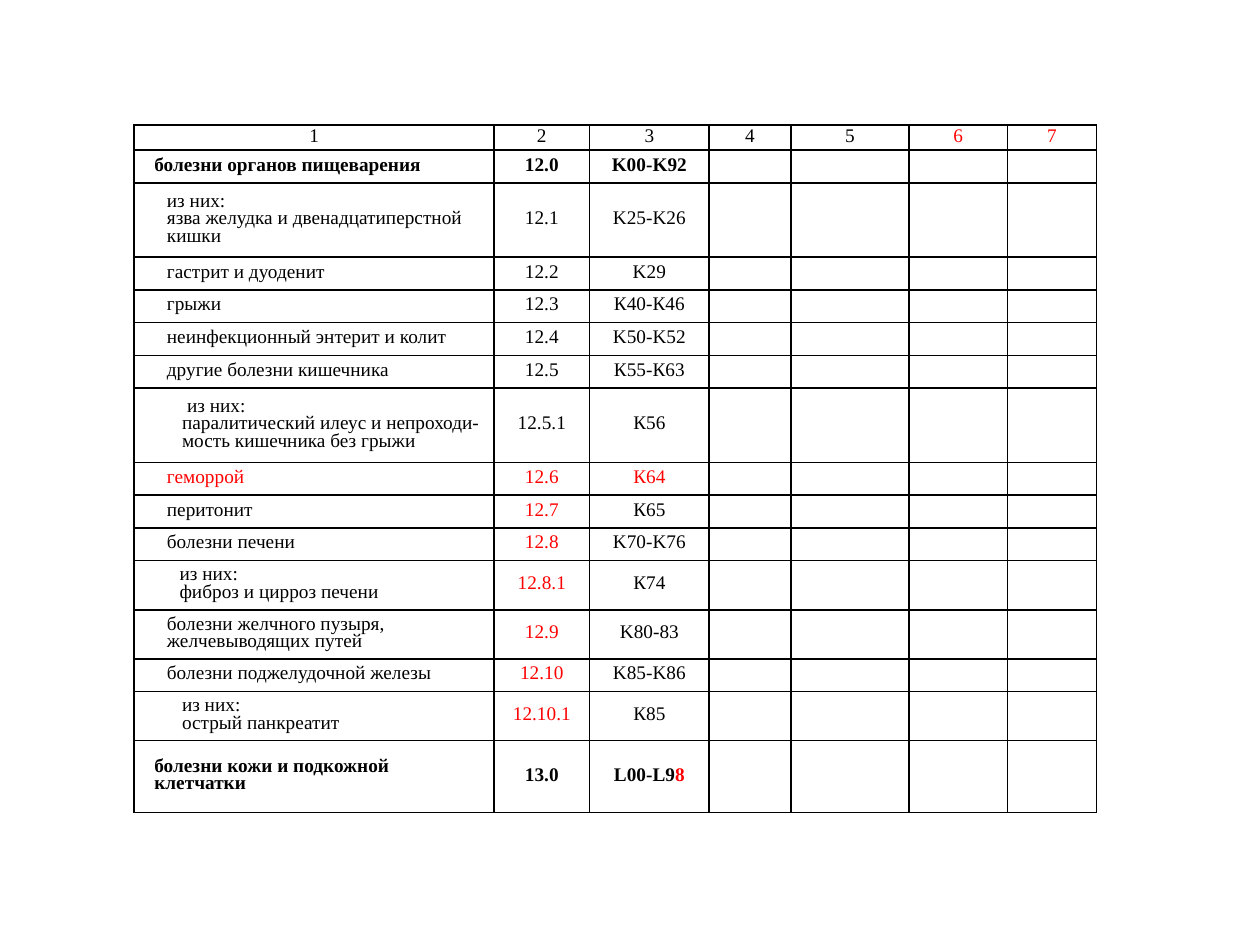
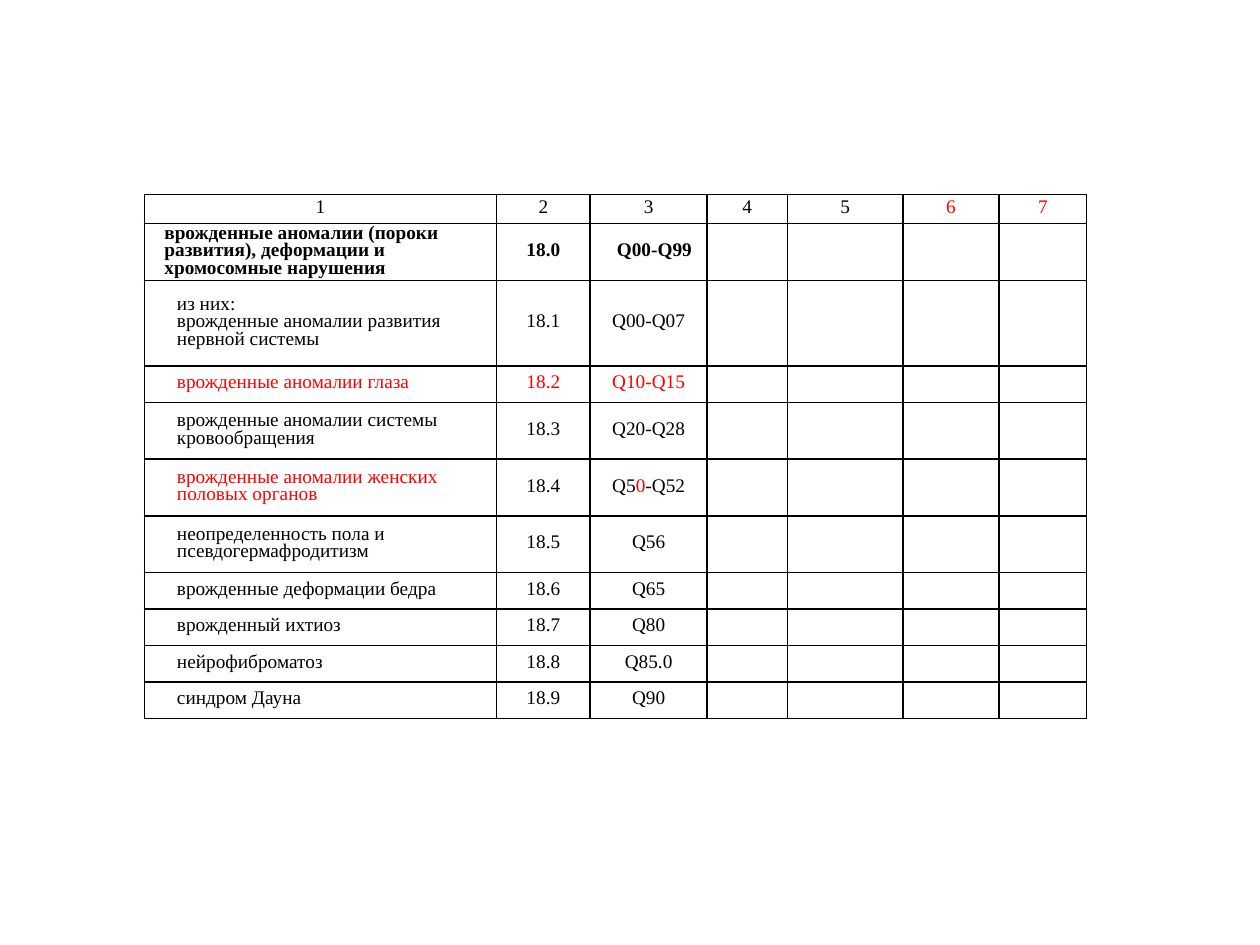
from collections import namedtuple

from lxml import etree
from pptx import Presentation
from pptx.dml.color import RGBColor
from pptx.enum.text import MSO_ANCHOR, PP_ALIGN
from pptx.oxml.ns import qn
from pptx.util import Inches, Pt

CENTER, LEFT = PP_ALIGN.CENTER, PP_ALIGN.LEFT
MIDDLE = MSO_ANCHOR.MIDDLE
BLACK = RGBColor(0x00, 0x00, 0x00)
RED = RGBColor(0xFF, 0x00, 0x00)
BLANK_LAYOUT = 6
SLIDE_WIDTH, SLIDE_HEIGHT = Inches(10), Inches(7.5)

# Indents of the disease names, in inches, by depth of the classification
SECTION, ITEM, SUBITEM = 0.09, 0.19, 0.31

# Relative column widths, the same on both slides
COLUMNS = (2.86, 0.76, 0.95, 0.65, 0.94, 0.78, 0.71)
HEADER = ("1", "2", "3", "4", "5", "*6*", "*7*")  # *...* marks red text

# "hang" is the extra indent of the first line, "code_indent" shifts the ICD code
Row = namedtuple("Row", "height indent name number code hang code_indent",
                 defaults=(0, 0))

DIGESTIVE_ROWS = (
    Row(0.26, SECTION, "болезни органов пищеварения", "12.0", "K00-K92"),
    Row(0.59, ITEM, "из них:\nязва желудка и двенадцатиперстной\nкишки",
        "12.1", "K25-K26"),
    Row(0.26, ITEM, "гастрит и дуоденит", "12.2", "K29"),
    Row(0.26, ITEM, "грыжи", "12.3", "К40-К46"),
    Row(0.26, ITEM, "неинфекционный энтерит и колит", "12.4", "K50-K52"),
    Row(0.26, ITEM, "другие болезни кишечника", "12.5", "К55-К63"),
    Row(0.59, SUBITEM,
        "из них:\nпаралитический илеус и непроходи-\nмость кишечника без грыжи",
        "12.5.1", "К56", hang=0.04),
    Row(0.26, ITEM, "*геморрой*", "*12.6*", "*К64*"),
    Row(0.26, ITEM, "перитонит", "*12.7*", "К65"),
    Row(0.26, ITEM, "болезни печени", "*12.8*", "K70-K76"),
    Row(0.39, 0.29, "из них:\nфиброз и цирроз печени", "*12.8.1*", "К74"),
    Row(0.39, ITEM, "болезни желчного пузыря, желчевыводящих путей",
        "*12.9*", "K80-83"),
    Row(0.26, ITEM, "болезни поджелудочной железы", "*12.10*", "K85-K86"),
    Row(0.39, SUBITEM, "из них:\nострый панкреатит", "*12.10.1*", "К85"),
    Row(0.57, SECTION, "болезни кожи и подкожной клетчатки", "13.0", "L00-L9*8*"),
)

CONGENITAL_ROWS = (
    Row(0.45, SECTION,
        "врожденные аномалии (пороки развития), деформации и хромосомные нарушения",
        "18.0", "Q00-Q99", code_indent=0.09),
    Row(0.68, ITEM, "из них:\nврожденные аномалии развития нервной системы",
        "18.1", "Q00-Q07"),
    Row(0.29, ITEM, "*врожденные аномалии глаза*", "*18.2*", "*Q10-Q15*"),
    Row(0.45, ITEM, "врожденные аномалии системы\nкровообращения",
        "18.3", "Q20-Q28"),
    Row(0.45, ITEM, "*врожденные аномалии женских половых органов*",
        "18.4", "Q5*0*-Q52"),
    Row(0.45, ITEM, "неопределенность пола и\nпсевдогермафродитизм",
        "18.5", "Q56"),
    Row(0.29, ITEM, "врожденные деформации бедра", "18.6", "Q65"),
    Row(0.29, ITEM, "врожденный ихтиоз", "18.7", "Q80"),
    Row(0.29, ITEM, "нейрофиброматоз", "18.8", "Q85.0"),
    Row(0.29, ITEM, "синдром Дауна", "18.9", "Q90"),
)


class Deck:
    """Holds the shared style and the current slide."""

    FONT = {"name": "Times New Roman", "size": Pt(11)}
    CELL = {"vertical_anchor": MIDDLE,
            "margin_left": Inches(0.07), "margin_right": Inches(0.07),
            "margin_top": 0, "margin_bottom": 0}
    LINE_SPACING = Pt(10)
    BORDER_WIDTH = Pt(1)

    def __init__(self):
        self.presentation = Presentation()
        self.presentation.slide_width = SLIDE_WIDTH
        self.presentation.slide_height = SLIDE_HEIGHT
        self.slide = None

    def add_slide(self):
        layout = self.presentation.slide_layouts[BLANK_LAYOUT]
        self.slide = self.presentation.slides.add_slide(layout)

    def add_borders(self, cell):
        properties = cell._tc.get_or_add_tcPr()
        for side in ("a:lnL", "a:lnR", "a:lnT", "a:lnB"):
            line = etree.SubElement(properties, qn(side), w=str(self.BORDER_WIDTH))
            fill = etree.SubElement(line, qn("a:solidFill"))
            etree.SubElement(fill, qn("a:srgbClr"), val=str(BLACK))

    def write_cell(self, cell, text="", alignment=CENTER, indent=0, hang=0, bold=False):
        """Write one paragraph per line; text between asterisks is red."""
        for name, value in self.CELL.items():
            setattr(cell, name, value)
        self.add_borders(cell)
        cell.fill.background()
        frame = cell.text_frame
        for index, line in enumerate(text.split("\n")):
            paragraph = frame.add_paragraph() if index else frame.paragraphs[0]
            paragraph.alignment = alignment
            paragraph.line_spacing = self.LINE_SPACING
            left = indent if index else indent + hang
            paragraph._p.get_or_add_pPr().set("marL", str(Inches(left)))
            for part, piece in enumerate(line.split("*")):
                if piece:
                    run = paragraph.add_run()
                    run.text = piece
                    for name, value in self.FONT.items():
                        setattr(run.font, name, value)
                    run.font.bold = bold
                    run.font.color.rgb = RED if part % 2 else BLACK
            # The end mark sets the height of an empty cell
            etree.SubElement(paragraph._p, qn("a:endParaRPr"),
                             sz=str(int(self.FONT["size"].pt * 100)))

    def add_disease_table(self, left, top, width, header_height, rows):
        """Place a table; left, top and width are percentages of the slide's size."""
        heights = [header_height] + [row.height for row in rows]
        table_width = SLIDE_WIDTH * width / 100
        table = self.slide.shapes.add_table(
            len(heights), len(COLUMNS), int(SLIDE_WIDTH * left / 100),
            int(SLIDE_HEIGHT * top / 100), int(table_width),
            Inches(sum(heights))).table
        table.first_row = table.horz_banding = False
        for column, share in zip(table.columns, COLUMNS):
            column.width = int(table_width * share / sum(COLUMNS))
        for table_row, height in zip(table.rows, heights):
            table_row.height = Inches(height)

        # Header with the column numbers
        for column, label in enumerate(HEADER):
            self.write_cell(table.cell(0, column), label)

        # Diseases, followed by the columns left for filling in
        for index, row in enumerate(rows, start=1):
            bold = row.indent == SECTION
            self.write_cell(table.cell(index, 0), row.name, LEFT,
                            row.indent, row.hang, bold)
            self.write_cell(table.cell(index, 1), row.number, bold=bold)
            self.write_cell(table.cell(index, 2), row.code,
                            indent=row.code_indent, bold=bold)
            for column in range(3, len(COLUMNS)):
                self.write_cell(table.cell(index, column))


def main():
    deck = Deck()

    # Diseases of the digestive system and the skin
    deck.add_slide()
    deck.add_disease_table(10.65, 13.22, 76.4, 0.2, DIGESTIVE_ROWS)

    # Congenital anomalies
    deck.add_slide()
    deck.add_disease_table(11.45, 20.6, 74.8, 0.23, CONGENITAL_ROWS)

    deck.presentation.save("out.pptx")


if __name__ == "__main__":
    main()
